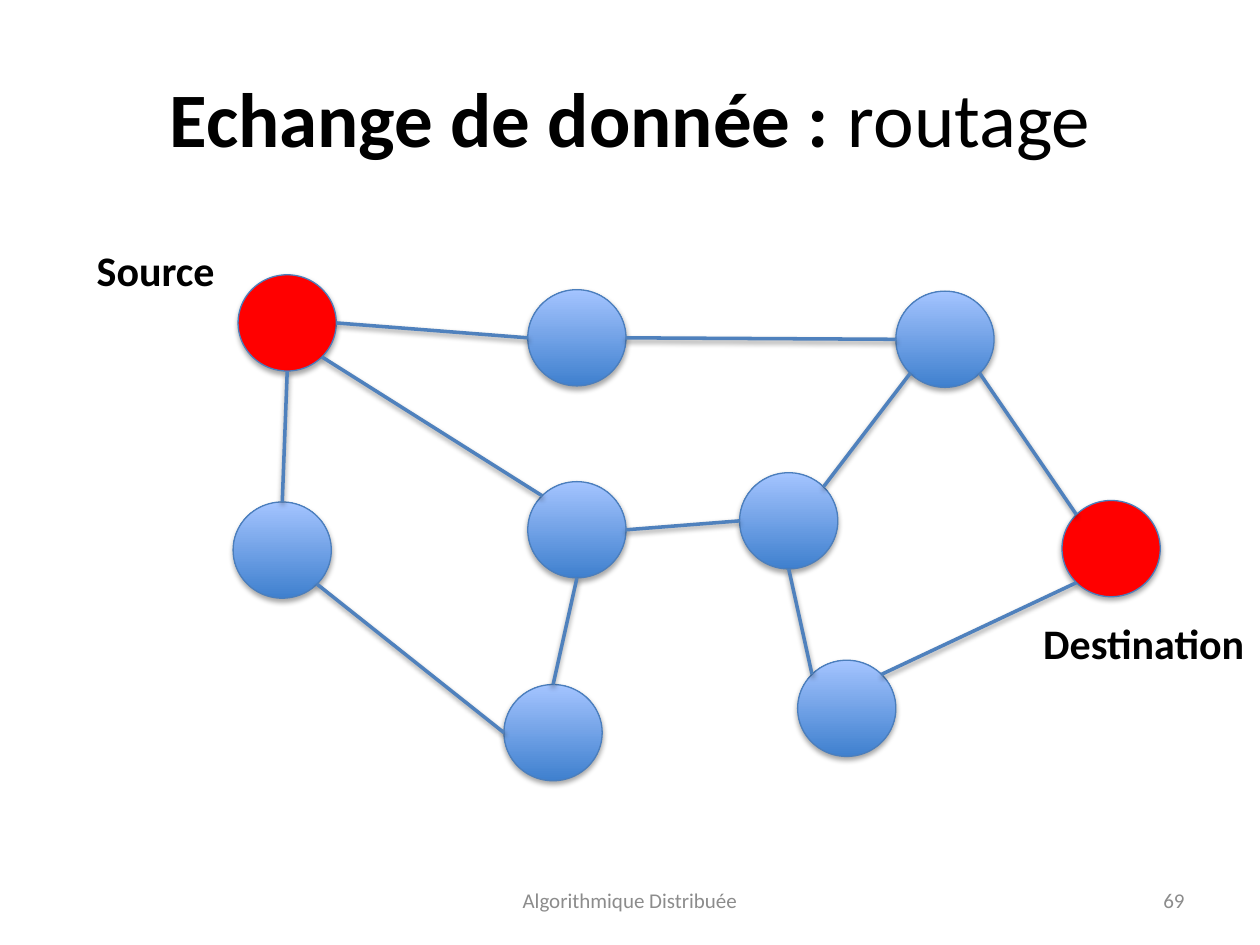
import math
from lxml import etree
from pptx import Presentation
from pptx.dml.color import RGBColor
from pptx.enum.shapes import MSO_CONNECTOR, MSO_SHAPE
from pptx.enum.text import MSO_ANCHOR, MSO_AUTO_SIZE, PP_ALIGN
from pptx.oxml.ns import qn
from pptx.util import Cm, Pt

STRAIGHT, OVAL = MSO_CONNECTOR.STRAIGHT, MSO_SHAPE.OVAL
TOP, MIDDLE = MSO_ANCHOR.TOP, MSO_ANCHOR.MIDDLE
LEFT, CENTER, RIGHT = PP_ALIGN.LEFT, PP_ALIGN.CENTER, PP_ALIGN.RIGHT
FIT_SHAPE = MSO_AUTO_SIZE.SHAPE_TO_FIT_TEXT

FONT = "Calibri"
BLACK, GREY, RED = "000000", "8C8C8C", "FF0000"
NODE_DARK, NODE_LIGHT, NODE_LINE, LINK_LINE = "3F80CE", "A4C4FF", "4B7EBC", "4F81BD"

NODE_WIDTH, NODE_HEIGHT = 1.98, 1.94
# Left and top of each node, in cm inside the network box
NODES = {
    "north-east": (13.36, 0.33),
    "centre": (5.94, 4.17),
    "source": (0.1, 0),
    "centre-east": (10.21, 3.99),
    "destination": (16.71, 4.55),
    "south-east": (11.38, 7.77),
    "south": (5.46, 8.26),
    "west": (0, 4.58),
    "north": (5.94, 0.3),
}
TERMINALS = {"source", "destination"}

# Connection sites of an ellipse run counter-clockwise from the top
SITES = ["top", "top left", "left", "bottom left",
         "bottom", "bottom right", "right", "top right"]
LINKS = [
    ("source", "bottom right", "centre", "top left"),
    ("source", "bottom", "west", "top"),
    ("north", "left", "source", "right"),
    ("north", "right", "north-east", "left"),
    ("north-east", "bottom right", "destination", "top left"),
    ("north-east", "bottom left", "centre-east", "top right"),
    ("centre-east", "left", "centre", "right"),
    ("west", "bottom right", "south", "left"),
    ("centre", "bottom", "south", "top"),
    ("centre-east", "bottom", "south-east", "top left"),
    ("destination", "bottom left", "south-east", "top right"),
]


def color(hex_string):
    return RGBColor.from_string(hex_string)


def add_shadow(shape, distance, opacity):
    """Give a shape or connector a soft shadow straight below it."""
    properties = shape._element.spPr
    effects = etree.SubElement(properties, qn("a:effectLst"))
    shadow = etree.SubElement(effects, qn("a:outerShdw"), blurRad=str(Pt(3.1)),
                              dist=str(Pt(distance)), dir="5400000", rotWithShape="0")
    tint = etree.SubElement(shadow, qn("a:srgbClr"), val=BLACK)
    etree.SubElement(tint, qn("a:alpha"), val=str(opacity * 1000))


def add_text(slide, box, runs, size, hex_string=BLACK, align=LEFT, anchor=MIDDLE, wrap=True):
    """Add one paragraph; runs are (text, bold) pairs and box is in cm."""
    frame = slide.shapes.add_textbox(*map(Cm, box)).text_frame
    frame.word_wrap = wrap
    frame.vertical_anchor = anchor
    if not wrap:
        frame.auto_size = FIT_SHAPE
    paragraph = frame.paragraphs[0]
    paragraph.alignment = align
    for text, bold in runs:
        run = paragraph.add_run()
        run.text = text
        run.font.name = FONT
        run.font.size = Pt(size)
        run.font.bold = bold
        run.font.color.rgb = color(hex_string)


def add_node(slide, left, top, is_terminal):
    node = slide.shapes.add_shape(OVAL, Cm(left), Cm(top), Cm(NODE_WIDTH), Cm(NODE_HEIGHT))
    if is_terminal:
        node.fill.solid()
        node.fill.fore_color.rgb = color(RED)
    else:
        node.fill.gradient()
        node.fill.gradient_angle = 90
        for stop, shade in zip(node.fill.gradient_stops, (NODE_DARK, NODE_LIGHT)):
            stop.color.rgb = color(shade)
    node.line.color.rgb = color(NODE_LINE)
    node.line.width = Pt(0.75)
    add_shadow(node, 1.8, 35)
    return node


def site_position(node, site):
    angle = math.radians(90 + 45 * SITES.index(site))
    return (round(node.left + node.width / 2 * (1 + math.cos(angle))),
            round(node.top + node.height / 2 * (1 - math.sin(angle))))


def add_link(slide, start, start_site, end, end_site):
    """Join two ellipses, whose eight sites begin_connect does not cover."""
    link = slide.shapes.add_connector(STRAIGHT, *site_position(start, start_site),
                                      *site_position(end, end_site))
    joints = link._element.nvCxnSpPr.cNvCxnSpPr
    for tag, node, site in (("a:stCxn", start, start_site), ("a:endCxn", end, end_site)):
        etree.SubElement(joints, qn(tag), id=str(node.shape_id), idx=str(SITES.index(site)))
    link.line.color.rgb = color(LINK_LINE)
    link.line.width = Pt(2)
    add_shadow(link, 1.6, 38)


def add_network(slide, left, top):
    nodes = {name: add_node(slide, left + x, top + y, name in TERMINALS)
             for name, (x, y) in NODES.items()}
    for start, start_site, end, end_site in LINKS:
        add_link(slide, nodes[start], start_site, nodes[end], end_site)
    add_text(slide, (left - 3, top - 0.74, 2.92, 1.27), [("Source", True)], 24,
             anchor=TOP, wrap=False)
    add_text(slide, (left + 16.08, top + 6.78, 4.62, 1.27), [("Destination", True)], 24,
             anchor=TOP, wrap=False)


def add_footer(slide, top):
    add_text(slide, (8.68, top, 8.04, 1.01), [("Algorithmique Distribuée", False)], 12,
             GREY, CENTER)
    add_text(slide, (18.2, top, 5.93, 1.01), [("69", False)], 12, GREY, RIGHT)


def main():
    presentation = Presentation()
    presentation.slide_width, presentation.slide_height = Cm(25.4), Cm(19.05)
    slide = presentation.slides.add_slide(presentation.slide_layouts[6])
    add_text(slide, (1.27, 0.76, 22.86, 3.18),
             [("Echange de donnée : ", True), ("routage", False)], 44, align=CENTER)
    add_network(slide, 4.7, 5.54)
    add_footer(slide, 17.65)
    presentation.save("out.pptx")


if __name__ == "__main__":
    main()
